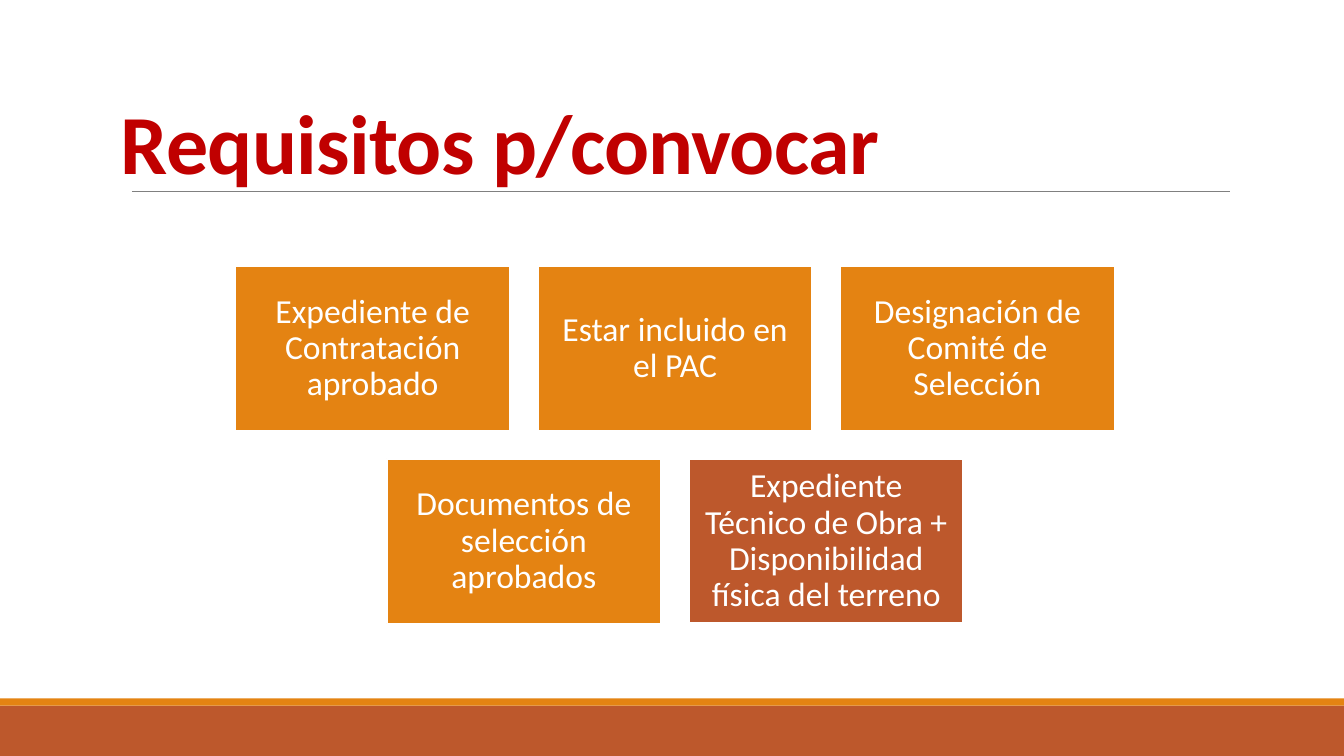
from lxml import etree
from pptx import Presentation
from pptx.dml.color import RGBColor
from pptx.enum.shapes import MSO_CONNECTOR, MSO_SHAPE
from pptx.enum.text import MSO_ANCHOR, PP_ALIGN
from pptx.oxml.ns import qn
from pptx.util import Pt

RECTANGLE = MSO_SHAPE.RECTANGLE
STRAIGHT = MSO_CONNECTOR.STRAIGHT
LEFT, CENTER = PP_ALIGN.LEFT, PP_ALIGN.CENTER
MIDDLE, BOTTOM = MSO_ANCHOR.MIDDLE, MSO_ANCHOR.BOTTOM

ORANGE, RUST, RED, GRAY, WHITE = "E48312", "BD582C", "C00000", "808080", "FFFFFF"
SLIDE_WIDTH, SLIDE_HEIGHT = 960, 540


def add_rectangle(left, top, width, height, fill, line_width=0):
    shape = slide.shapes.add_shape(RECTANGLE, Pt(left), Pt(top), Pt(width), Pt(height))
    shape.shadow.inherit = False
    shape.fill.solid()
    shape.fill.fore_color.rgb = RGBColor.from_string(fill)
    if line_width:
        shape.line.color.rgb = RGBColor.from_string(WHITE)
        shape.line.width = Pt(line_width)
    else:
        shape.line.fill.background()
    return shape


def write_text(shape, text, size, color, align=LEFT, anchor=MIDDLE, margin=0,
               line_spacing=1.0, bold=False, letter_spacing=0):
    """Fill the shape with one paragraph; letter_spacing is in points."""
    frame = shape.text_frame
    frame.word_wrap = True
    frame.vertical_anchor = anchor
    frame.margin_left = frame.margin_right = Pt(margin)
    frame.margin_top = frame.margin_bottom = Pt(margin)
    paragraph = frame.paragraphs[0]
    paragraph.alignment = align
    paragraph.line_spacing = line_spacing
    run = paragraph.add_run()
    run.text = text
    run.font.name = "Calibri"
    run.font.size = Pt(size)
    run.font.bold = bold
    run.font.color.rgb = RGBColor.from_string(color)
    if letter_spacing:
        run.font._element.set("spc", str(round(letter_spacing * 100)))


presentation = Presentation()
presentation.slide_width = Pt(SLIDE_WIDTH)
presentation.slide_height = Pt(SLIDE_HEIGHT)
slide = presentation.slides.add_slide(presentation.slide_layouts[6])

# Footer bands
add_rectangle(0, 504, SLIDE_WIDTH, 36, RUST)
add_rectangle(0, 498.8, SLIDE_WIDTH, 5.2, ORANGE)

# Title and its rule
title_rule = slide.shapes.add_connector(STRAIGHT, Pt(94.2), Pt(136.8), Pt(878.8), Pt(136.8))
title_rule.line.color.rgb = RGBColor.from_string(GRAY)
title_rule.line.width = Pt(0.5)
etree.SubElement(title_rule._element.spPr, qn("a:effectLst"))

title = slide.shapes.add_textbox(Pt(86.4), Pt(22.3), Pt(792), Pt(114.5))
write_text(title, "Requisitos p/convocar", 60, RED, anchor=BOTTOM,
           line_spacing=0.85, bold=True, letter_spacing=-0.5)

# Requirement boxes: each row is centred on the same axis
BOX_WIDTH, BOX_HEIGHT, GAP = 196, 117.6, 20
ROWS_CENTER, ROWS_TOP = 482.2, 190.2
requirement_rows = [
    [("Expediente de Contratación aprobado", ORANGE, 1.25),
     ("Estar incluido en el PAC", ORANGE, 1.25),
     ("Designación de Comité de Selección", ORANGE, 1.25)],
    [("Documentos de selección aprobados", ORANGE, 1.25),
     ("Expediente Técnico de Obra + Disponibilidad física del terreno", RUST, 2)],
]
for row, requirements in enumerate(requirement_rows):
    row_width = len(requirements) * (BOX_WIDTH + GAP) - GAP
    top = ROWS_TOP + row * (BOX_HEIGHT + GAP)
    for column, (text, fill, line_width) in enumerate(requirements):
        left = ROWS_CENTER - row_width / 2 + column * (BOX_WIDTH + GAP)
        box = add_rectangle(left, top, BOX_WIDTH, BOX_HEIGHT, fill, line_width)
        write_text(box, text, 24, WHITE, align=CENTER, margin=7.2, line_spacing=0.9)

presentation.save("out.pptx")
